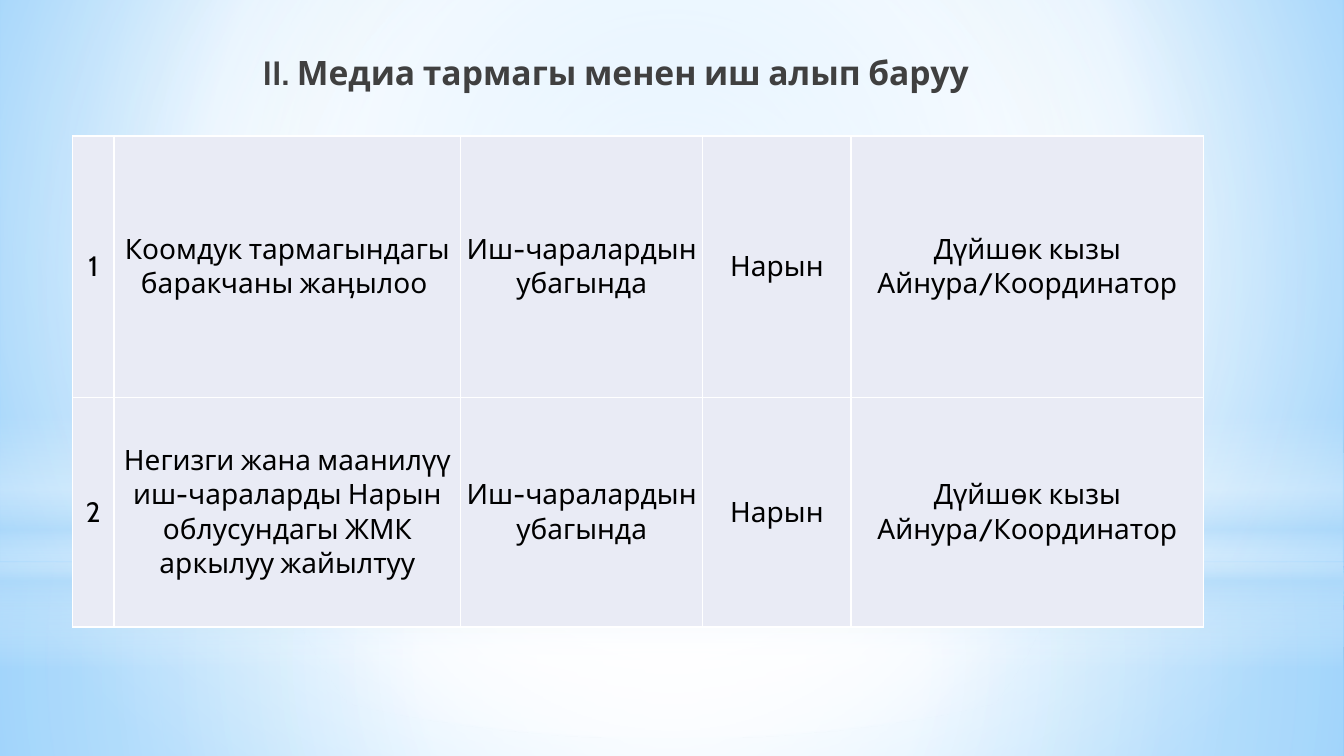
from lxml.etree import SubElement
from pptx import Presentation
from pptx.dml.color import RGBColor
from pptx.enum.shapes import MSO_SHAPE
from pptx.enum.text import MSO_ANCHOR, PP_ALIGN
from pptx.oxml.ns import qn
from pptx.util import Pt

PX = 9144
FONT = "Cabin"


def shade(fill, owner, stops, focus=None):
    fill.gradient()
    grad = next(owner.iter(qn("a:gradFill")))
    for child in list(grad):
        grad.remove(child)
    items = SubElement(grad, qn("a:gsLst"))
    for pos, tint, alpha in stops:
        stop = SubElement(items, qn("a:gs"), pos=str(pos * 1000))
        color = SubElement(stop, qn("a:srgbClr"), val=tint)
        SubElement(color, qn("a:alpha"), val=str(alpha * 1000))
    if focus:
        radial = SubElement(grad, qn("a:path"), path="circle")
        sides = {side: str(part * 1000) for side, part in zip("ltrb", focus)}
        SubElement(radial, qn("a:fillToRect"), **sides)
    else:
        SubElement(grad, qn("a:lin"), ang="5400000", scaled="0")


def write(para, text, size, tint, bold=False):
    para.alignment = PP_ALIGN.CENTER
    run = para.add_run()
    run.text = text
    run.font.name = FONT
    run.font.size = Pt(size)
    run.font.bold = bold
    run.font.color.rgb = RGBColor.from_string(tint)


deck = Presentation()
deck.slide_width, deck.slide_height = 1333 * PX, 750 * PX
slide = deck.slides.add_slide(deck.slide_layouts[6])

shade(slide.background.fill, slide.element,
      [(0, "9ED5FF", 100), (60, "FFFFFF", 100), (100, "5BB9FF", 100)],
      (20, 10, 20, 60))

center = (50, 50, 50, 50)
layers = [
    (MSO_SHAPE.RECTANGLE, 558, 192, center,
     [(0, "FFFFFF", 91), (37, "FFFFFF", 76), (100, "B4DCFA", 79)]),
    (MSO_SHAPE.RECTANGLE, 0, 558, center,
     [(0, "FFFFFF", 89), (48, "FFFFFF", 62), (100, "B4DCFA", 79)]),
    (MSO_SHAPE.RECTANGLE, 412, 250, None,
     [(0, "FFFFFF", 0), (29, "FFFFFF", 30), (45, "B4DCFA", 40),
      (55, "FFFFFF", 26), (65, "B4DCFA", 60), (100, "FFFFFF", 0)]),
    (MSO_SHAPE.OVAL, 175, 558, center,
     [(0, "FFFFFF", 100), (56, "FFFFFF", 0)]),
]
for kind, top, height, focus, stops in layers:
    layer = slide.shapes.add_shape(kind, 0, top * PX, 1333 * PX, height * PX)
    layer.shadow.inherit = False
    layer.line.fill.background()
    shade(layer.fill, layer.element, stops, focus)

title = slide.shapes.add_textbox(72 * PX, 33 * PX, 1085 * PX, 63 * PX)
frame = title.text_frame
frame.word_wrap = True
frame.vertical_anchor = MSO_ANCHOR.BOTTOM
frame.paragraphs[0].space_after = Pt(3)
write(frame.paragraphs[0], "II. Медиа тармагы менен иш алып баруу ", 24, "404040", True)

widths = [41, 344, 240, 147, 350]
heights = [259, 228]
tasks = [
    "Коомдук тармагындагы баракчаны жаӊылоо ",
    "Негизги жана маанилүү иш-чараларды Нарын облусундагы ЖМК аркылуу жайылтуу",
]
shared = ["Иш-чаралардын убагында", "Нарын", "Дүйшөк кызы Айнура/Координатор"]

table = slide.shapes.add_table(len(heights), len(widths), 72 * PX, 135 * PX,
                               sum(widths) * PX, sum(heights) * PX).table
table.first_row = False
table.horz_banding = False
for column, width in zip(table.columns, widths):
    column.width = width * PX
for index, (row, height, task) in enumerate(zip(table.rows, heights, tasks), 1):
    row.height = height * PX
    for cell, text in zip(row.cells, [str(index), task, *shared]):
        cell.margin_left = cell.margin_right = 0
        cell.margin_top = cell.margin_bottom = 0
        cell.vertical_anchor = MSO_ANCHOR.MIDDLE
        for side in "LRTB":
            edge = SubElement(cell._tc.tcPr, qn("a:ln" + side), w="12700")
            paint = SubElement(edge, qn("a:solidFill"))
            SubElement(paint, qn("a:srgbClr"), val="FFFFFF")
        cell.fill.solid()
        cell.fill.fore_color.rgb = RGBColor.from_string("E9EBF5")
        write(cell.text_frame.paragraphs[0], text, 20, "000000")

deck.save("out.pptx")
